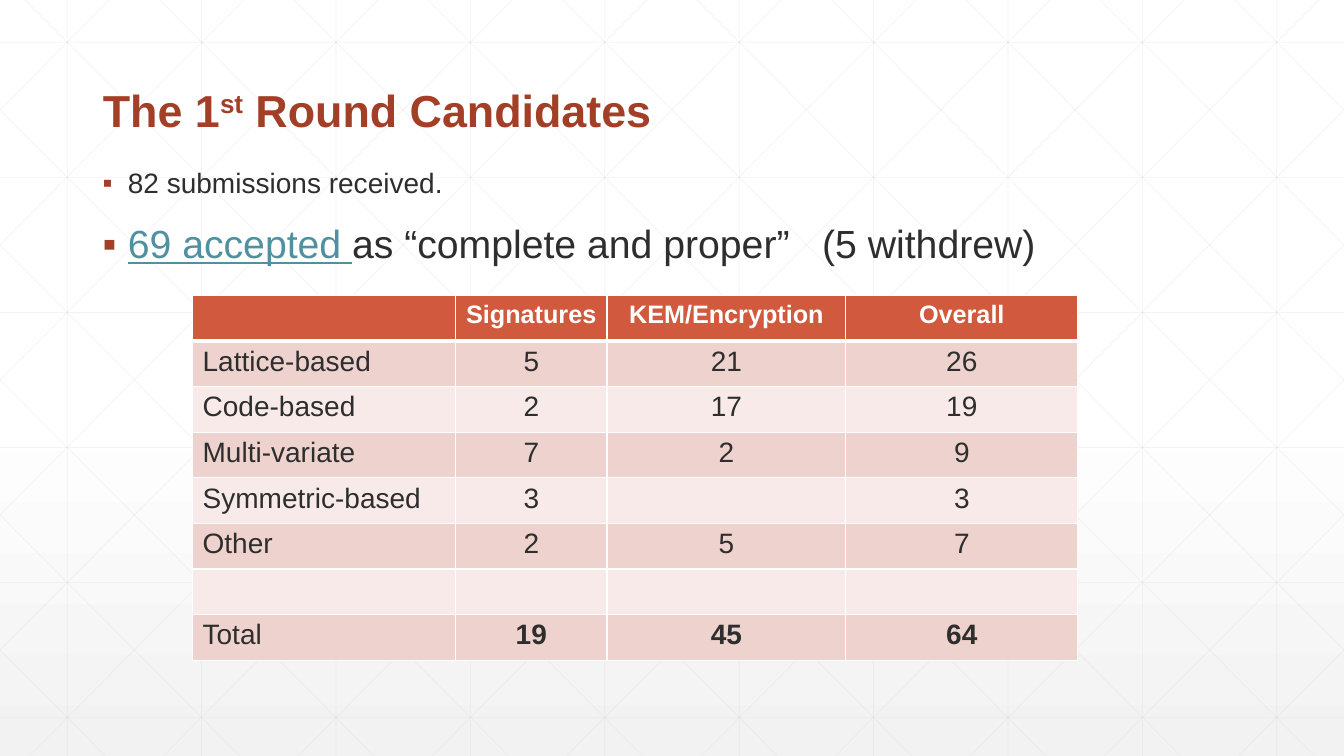
"""Build the slide that lists the first round candidates."""
from lxml import etree
from pptx import Presentation
from pptx import util as u
from pptx.dml.color import RGBColor
from pptx.enum import shapes, text
from pptx.oxml import ns

WIDTH, HEIGHT = 13.33, 7.5
STEP = WIDTH / 10
ROW_STEP = 1.34
COLOURS = {
    "white": "FFFFFF", "mist": "F2F2F2", "grid": "D9D9D9", "rust": "A43F27",
    "ink": "2D2E2D", "teal": "4F91A1", "header": "D15A3E",
    "dark band": "EED2CE", "light band": "F7EAE8",
}


def add_span(para, words, size, colour, **formats):
    span = para.add_run()
    span.text = words
    span.font.color.rgb = RGBColor.from_string(COLOURS[colour])
    for name, value in {"name": "Arial", "size": u.Pt(size), **formats}.items():
        setattr(span.font, name, value)
    return span


def add_node(parent, tag, **values):
    node = etree.SubElement(parent, ns.qn(tag))
    for name, value in values.items():
        node.set(name, str(value))
    return node


deck = Presentation()
deck.slide_width, deck.slide_height = u.Inches(WIDTH), u.Inches(HEIGHT)
page = deck.slides.add_slide(deck.slide_layouts[5])

backdrop = page.background.fill
backdrop.gradient()
backdrop.gradient_angle = 270
for stop, (place, colour) in zip(backdrop.gradient_stops, [(0.53, "white"), (1, "mist")]):
    stop.position = place
    stop.color.rgb = RGBColor.from_string(COLOURS[colour])

grid_lines = []
for column in range(10):
    x = STEP * (column + 0.5)
    grid_lines.append((x, 0, x, HEIGHT))
for row in range(6):
    y = 0.42 + row * ROW_STEP
    grid_lines.append((0, y, WIDTH, y))
slope = ROW_STEP / STEP
for column in range(-5, 10):
    start = 0.25 + column * STEP
    left, right = max(start, 0), min(start + HEIGHT / slope, WIDTH)
    top, bottom = (left - start) * slope, (right - start) * slope
    grid_lines.append((left, top, right, bottom))
    grid_lines.append((WIDTH - left, top, WIDTH - right, bottom))

grid = page.shapes.add_group_shape()
for ends in grid_lines:
    line = grid.shapes.add_connector(
        shapes.MSO_CONNECTOR.STRAIGHT, *[u.Inches(end) for end in ends])
    line.line.width = u.Pt(0.5)
    line.line.color.rgb = RGBColor.from_string(COLOURS["grid"])
    add_node(next(line._element.spPr.iter(ns.qn("a:srgbClr"))), "a:alpha", val=30000)
    add_node(line._element.spPr, "a:effectLst")

title = page.shapes.title
page.shapes._spTree.append(title._element)
title.left, title.top, title.width, title.height = map(u.Inches, (0.92, 0.55, 10.5, 0.86))
for name, value in {"vertical_anchor": text.MSO_ANCHOR.BOTTOM, "word_wrap": True,
                    "auto_size": text.MSO_AUTO_SIZE.NONE}.items():
    setattr(title.text_frame, name, value)
para = title.text_frame.paragraphs[0]
para.alignment, para.line_spacing = text.PP_ALIGN.LEFT, 0.9
for words, baseline in [("The 1", 0), ("st", 30000), (" Round Candidates", 0)]:
    span = add_span(para, words, 32, "rust", bold=True)
    span.font._element.set("baseline", str(baseline))

box = page.shapes.add_textbox(*map(u.Inches, (0.92, 1.63, 11.5, 4.76)))
box.text_frame.word_wrap = True
points = [
    [("82 submissions received.", 20, "ink", False)],
    [("69 accepted ", 28, "teal", True),
     ("as “complete and proper”   (5 withdrew)", 28, "ink", False)],
]
for number, point in enumerate(points):
    para = box.text_frame.add_paragraph() if number else box.text_frame.paragraphs[0]
    para.line_spacing, para.space_before = 0.9, u.Pt(18)
    layout = para._p.get_or_add_pPr()
    layout.set("marL", str(u.Inches(0.25)))
    layout.set("indent", str(-u.Inches(0.25)))
    add_node(add_node(layout, "a:buClr"), "a:srgbClr", val=COLOURS["rust"])
    add_node(layout, "a:buFont", typeface="Arial")
    add_node(layout, "a:buChar", char="▪")
    for words, size, colour, underline in point:
        add_span(para, words, size, colour, underline=underline)

rows = [
    ("", "Signatures", "KEM/Encryption", "Overall"),
    ("Lattice-based", "5", "21", "26"),
    ("Code-based", "2", "17", "19"),
    ("Multi-variate", "7", "2", "9"),
    ("Symmetric-based", "3", "", "3"),
    ("Other", "2", "5", "7"),
    ("", "", "", ""),
    ("Total", "19", "45", "64"),
]
column_widths = (2.61, 1.5, 2.37, 2.3)
table = page.shapes.add_table(
    len(rows), len(column_widths), *map(u.Inches, (1.91, 2.93, 8.78, 3.62))).table
for column, width in zip(table.columns, column_widths):
    column.width = u.Inches(width)
for r, row in enumerate(rows):
    band = "header" if r == 0 else "dark band" if r % 2 else "light band"
    for c, words in enumerate(row):
        cell = table.cell(r, c)
        edges = {"a:lnL": 1, "a:lnR": 1, "a:lnT": 3 if r == 1 else 1, "a:lnB": 1 if r else 3}
        for tag, weight in edges.items():
            edge = add_node(cell._tc.get_or_add_tcPr(), tag, w=u.Pt(weight))
            add_node(add_node(edge, "a:solidFill"), "a:srgbClr", val=COLOURS["white"])
        cell.fill.solid()
        cell.fill.fore_color.rgb = RGBColor.from_string(COLOURS[band])
        para = cell.text_frame.paragraphs[0]
        para.alignment = text.PP_ALIGN.CENTER if c else text.PP_ALIGN.LEFT
        if words:
            add_span(para, words, 20 if r else 18, "ink" if r else "white",
                     bold=r == 0 or (r == len(rows) - 1 and c > 0))

deck.save("out.pptx")
